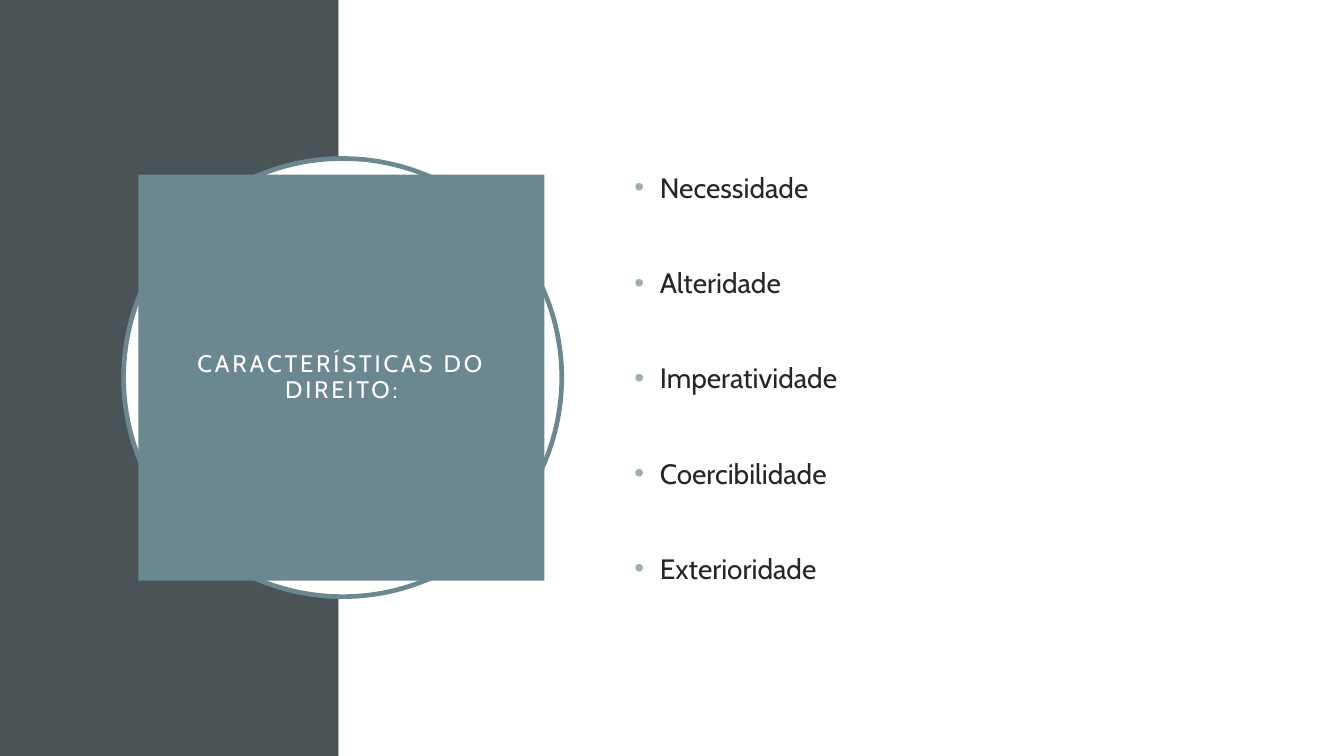
import dataclasses

import lxml.etree
import pptx
import pptx.dml.color
import pptx.enum.shapes
import pptx.enum.text
import pptx.oxml.ns
import pptx.util

Inches = pptx.util.Inches
Pt = pptx.util.Pt
RGB = pptx.dml.color.RGBColor.from_string
SHAPES = pptx.enum.shapes.MSO_SHAPE
ALIGN = pptx.enum.text.PP_ALIGN
qn = pptx.oxml.ns.qn


@dataclasses.dataclass(frozen=True)
class Theme:
    font: str = "Cabin"
    dark: str = "4A5356"
    accent: str = "6B8891"
    bullet: str = "9BAFB5"
    paper: str = "FFFFFF"
    ink: str = "262626"
    title_size: float = 12.8
    list_size: float = 15


THEME = Theme()
WIDTH = 10
HEIGHT = WIDTH * 9 / 16
SIDEBAR_WIDTH = 2.52
CHARACTERISTICS = [
    "Necessidade",
    "Alteridade",
    "Imperatividade",
    "Coercibilidade",
    "Exterioridade",
]


def place(part, box):
    part.left, part.top, part.width, part.height = map(Inches, box)


def add_filled(slide, kind, box, color):
    part = slide.shapes.add_shape(kind, *map(Inches, box))
    part.shadow.inherit = False
    part.fill.solid()
    part.fill.fore_color.rgb = RGB(color)
    part.line.fill.background()
    return part


def set_frame(frame, horizontal, vertical):
    frame.word_wrap = True
    frame.auto_size = pptx.enum.text.MSO_AUTO_SIZE.NONE
    frame.vertical_anchor = pptx.enum.text.MSO_ANCHOR.MIDDLE
    frame.margin_left = frame.margin_right = Inches(horizontal)
    frame.margin_top = frame.margin_bottom = Inches(vertical)


def style_runs(paragraph, size, color):
    for run in paragraph.runs:
        run.font.name = THEME.font
        run.font.size = Pt(size)
        run.font.color.rgb = RGB(color)


def add_backdrop(slide, box):
    left, top, width, height = box
    sidebar = (left, top, SIDEBAR_WIDTH, height)
    content = (left + SIDEBAR_WIDTH, top, width - SIDEBAR_WIDTH, height)
    for panel, color in ((sidebar, THEME.dark), (content, THEME.paper)):
        add_filled(slide, SHAPES.RECTANGLE, panel, color)


def add_title_badge(slide, box, text):
    left, top, size, _ = box
    ring = add_filled(slide, SHAPES.OVAL, box, THEME.paper)
    ring.line.color.rgb = RGB(THEME.accent)
    ring.line.width = Pt(2.5)

    title = slide.shapes.title
    slide.shapes.element.append(title.element)
    plate_size = size - 0.24
    place(title, (left + 0.11, top + 0.12, plate_size, plate_size))
    title.fill.solid()
    title.fill.fore_color.rgb = RGB(THEME.accent)
    set_frame(title.text_frame, 0.15, 0.15)
    title.text_frame.text = text
    heading = title.text_frame.paragraphs[0]
    heading.alignment = ALIGN.CENTER
    heading.line_spacing = 0.9
    style_runs(heading, THEME.title_size, THEME.paper)
    for run in heading.runs:
        run.font._element.set("spc", "150")


def set_bullet(paragraph):
    properties = paragraph._p.get_or_add_pPr()
    properties.set("marL", str(Inches(0.24)))
    properties.set("indent", str(Inches(-0.19)))
    color = lxml.etree.SubElement(properties, qn("a:buClr"))
    lxml.etree.SubElement(color, qn("a:srgbClr"), val=THEME.bullet)
    lxml.etree.SubElement(properties, qn("a:buFont"), typeface="Arial")
    lxml.etree.SubElement(properties, qn("a:buChar"), char="•")


def add_characteristics(slide, box, items):
    body = slide.placeholders[1]
    slide.shapes.element.append(body.element)
    place(body, box)
    set_frame(body.text_frame, 0.07, 0.04)
    body.text_frame.text = "\n".join(items)
    for index, item in enumerate(body.text_frame.paragraphs):
        item.alignment = ALIGN.LEFT
        item.space_before = Pt(33 if index else 0)
        set_bullet(item)
        style_runs(item, THEME.list_size, THEME.ink)


def main():
    deck = pptx.Presentation()
    deck.slide_width, deck.slide_height = Inches(WIDTH), Inches(HEIGHT)
    slide = deck.slides.add_slide(deck.slide_layouts[1])
    add_backdrop(slide, (0, 0, WIDTH, HEIGHT))
    add_title_badge(slide, (0.92, 1.18, 3.26, 3.26), "CARACTERÍSTICAS DO DIREITO:")
    add_characteristics(slide, (4.6, 1, 4.36, 3.62), CHARACTERISTICS)
    deck.save("out.pptx")


if __name__ == "__main__":
    main()
